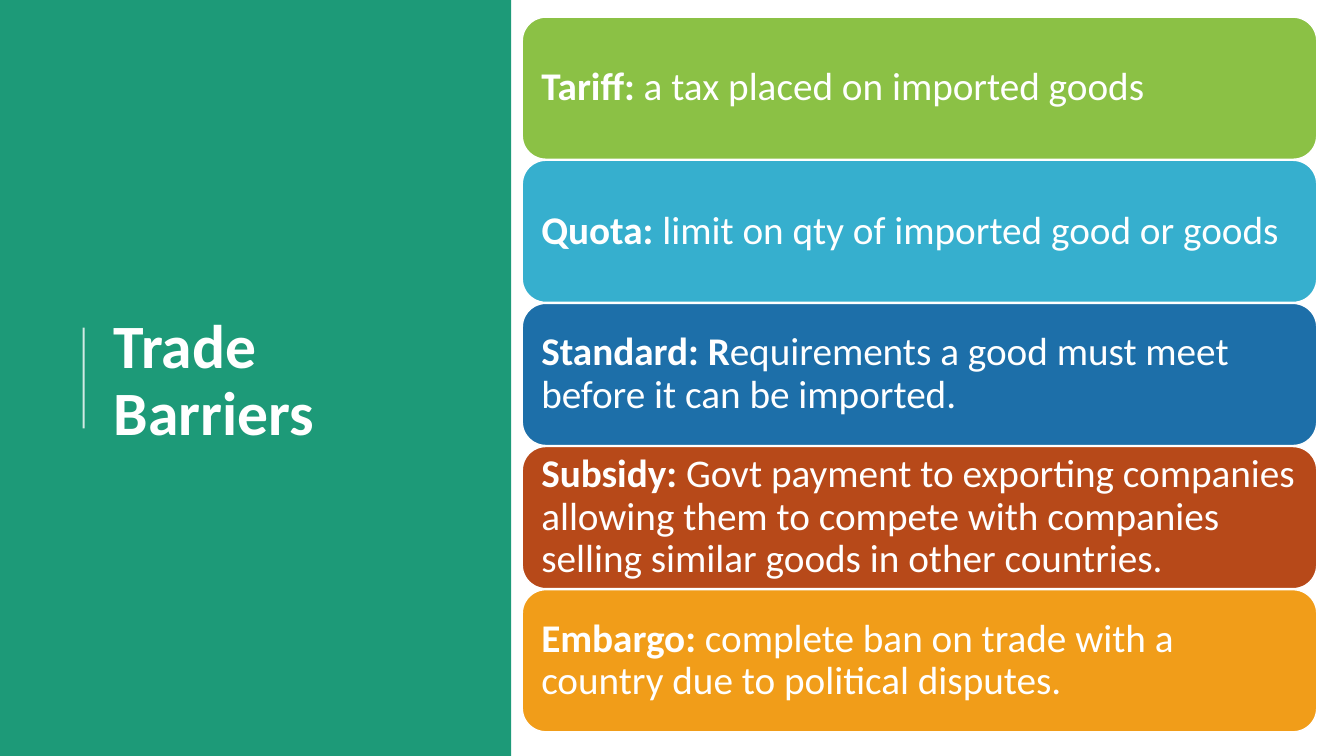
from lxml.etree import SubElement
from pptx import Presentation
from pptx.dml.color import RGBColor
from pptx.enum.shapes import MSO_CONNECTOR, MSO_SHAPE
from pptx.enum.text import MSO_ANCHOR, PP_ALIGN
from pptx.oxml.ns import qn
from pptx.util import Inches, Pt

FONT = "Calibri"
WHITE = "FFFFFF"
PANEL_GREEN = "1D9A78"

# Bold term, explanation, card colour
BARRIERS = [
    ("Tariff: ", "a tax placed on imported goods", "8BC145"),
    ("Quota: ", "limit on qty of imported good or goods", "36AFCE"),
    ("Standard: R", "equirements a good must meet before it can be imported.", "1D6FA9"),
    ("Subsidy: ", "Govt payment to exporting companies allowing them to compete "
     "with companies selling similar goods in other countries.", "B74919"),
    ("Embargo: ", "complete ban on trade with a country due to political disputes.", "F19D19"),
]
CARD_LEFT, CARD_TOP, CARD_WIDTH, CARD_HEIGHT = 5.18, 0.17, 7.88, 1.41
CARD_PITCH = 1.42


def color(hex_string):
    return RGBColor.from_string(hex_string)


def format_paragraph(paragraph, size):
    paragraph.alignment = PP_ALIGN.LEFT
    paragraph.line_spacing = 0.9
    paragraph.font.name = FONT
    paragraph.font.size = Pt(size)
    paragraph.font.color.rgb = color(WHITE)


def add_block(slide, preset, left, top, width, height, fill):
    block = slide.shapes.add_shape(
        preset, Inches(left), Inches(top), Inches(width), Inches(height))
    block.shadow.inherit = False
    block.fill.solid()
    block.fill.fore_color.rgb = color(fill)
    block.line.fill.background()
    return block


def set_title(slide, text, panel):
    title = slide.shapes.title
    title.left, title.top = Inches(1.03), Inches(0.78)
    title.width, title.height = Inches(3.69), Inches(6.02)
    frame = title.text_frame
    frame.text = text
    frame.word_wrap = True
    frame.margin_right = Inches(0.2)
    frame.vertical_anchor = MSO_ANCHOR.MIDDLE
    format_paragraph(frame.paragraphs[0], 44)
    frame.paragraphs[0].font.bold = True
    # Bring the title in front of the panel
    panel.element.addnext(title.element)


def add_rule(slide, x, start_y, end_y):
    rule = slide.shapes.add_connector(
        MSO_CONNECTOR.STRAIGHT, Inches(x), Inches(start_y), Inches(x), Inches(end_y))
    rule.line.width = Pt(1.5)
    rule.line.color.rgb = color(WHITE)
    # 80 % opacity, no shadow
    rgb = rule.element.spPr.find(".//" + qn("a:srgbClr"))
    SubElement(rgb, qn("a:alpha"), val="80000")
    SubElement(rule.element.spPr, qn("a:effectLst"))


def add_card(slide, top, term, explanation, fill):
    card = add_block(slide, MSO_SHAPE.ROUNDED_RECTANGLE,
                     CARD_LEFT, top, CARD_WIDTH, CARD_HEIGHT, fill)
    card.line.color.rgb = color(WHITE)
    card.line.width = Pt(1)
    frame = card.text_frame
    frame.word_wrap = True
    frame.vertical_anchor = MSO_ANCHOR.MIDDLE
    frame.margin_left = frame.margin_right = Inches(0.12)
    frame.margin_top = frame.margin_bottom = Inches(0.12)
    paragraph = frame.paragraphs[0]
    format_paragraph(paragraph, 28)
    for text, bold in ((term, True), (explanation, False)):
        run = paragraph.add_run()
        run.text = text
        run.font.bold = bold


def main():
    presentation = Presentation()
    presentation.slide_width = Inches(13.33)
    presentation.slide_height = Inches(7.5)
    slide = presentation.slides.add_slide(presentation.slide_layouts[5])

    # Left panel with title
    panel = add_block(slide, MSO_SHAPE.RECTANGLE, 0, 0, 5.07, 7.5, PANEL_GREEN)
    set_title(slide, "Trade Barriers", panel)
    add_rule(slide, 0.83, 4.25, 3.25)

    # Stack of barrier cards
    for row, (term, explanation, fill) in enumerate(BARRIERS):
        add_card(slide, CARD_TOP + row * CARD_PITCH, term, explanation, fill)

    presentation.save("out.pptx")


if __name__ == "__main__":
    main()
